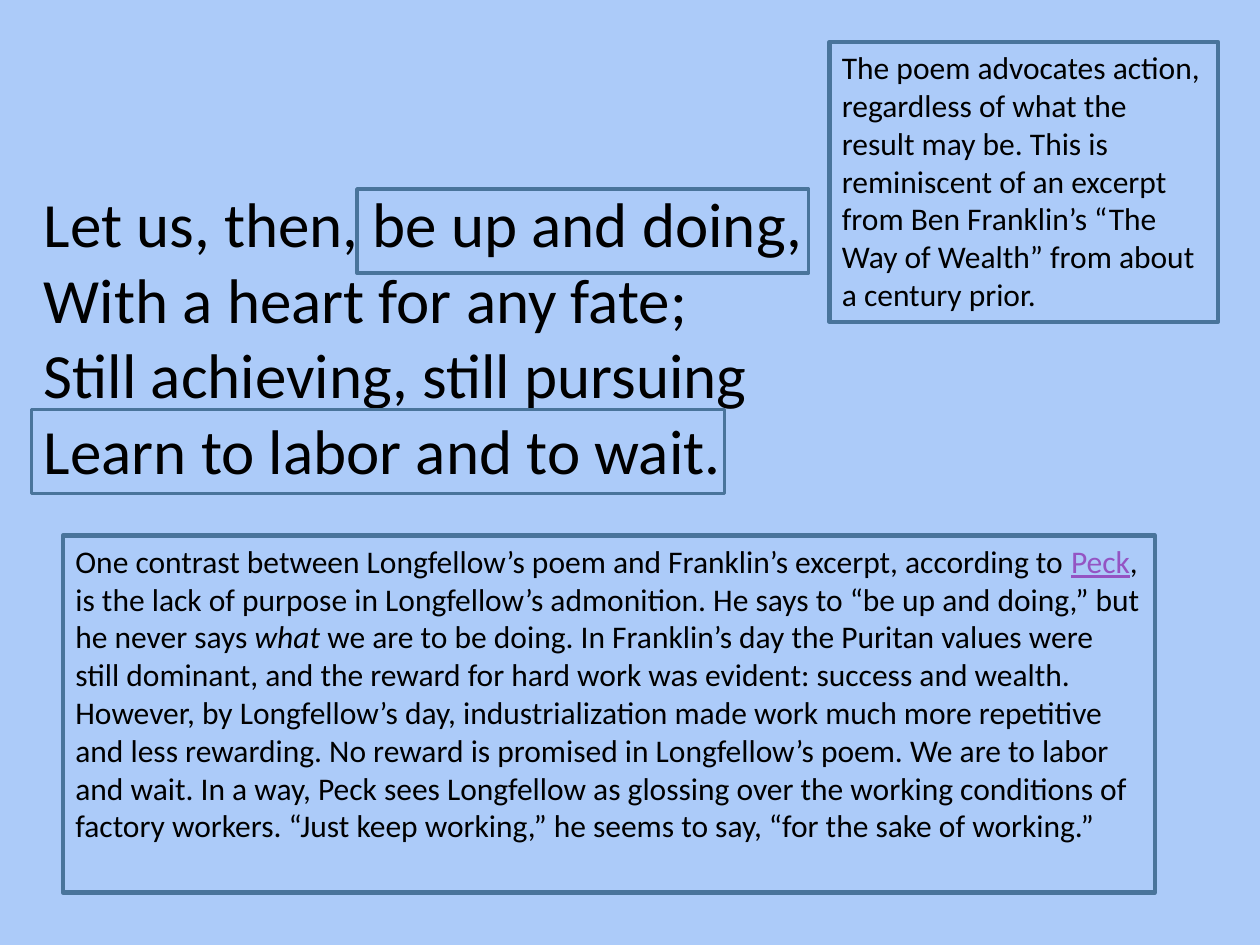
import dataclasses

import pptx
import pptx.dml.color
import pptx.enum.shapes
import pptx.enum.text
import pptx.util

Pt = pptx.util.Pt


@dataclasses.dataclass(frozen=True)
class Theme:
    back: str = "ACCBF9"
    edge: str = "49749B"
    ink: str = "000000"
    link: str = "9454C3"
    font: str = "Calibri"
    verse: int = 36
    note: int = 18
    thin: float = 2
    thick: float = 2.5


THEME = Theme()

POEM = [
    "Let us, then, be up and doing,",
    "With a heart for any fate;",
    "Still achieving, still pursuing",
    "Learn to labor and to wait.",
]

ACTION = (
    "The poem advocates action, regardless of what the result may be. "
    "This is reminiscent of an excerpt from Ben Franklin’s “The Way of "
    "Wealth” from about a century prior."
)

BEFORE = (
    "One contrast between Longfellow’s poem and Franklin’s excerpt, "
    "according to "
)
MIDDLE = (
    ", is the lack of purpose in Longfellow’s admonition. He says to "
    "“be up and doing,” but he never says "
)
AFTER = (
    " we are to be doing. In Franklin’s day the Puritan values were still "
    "dominant, and the reward for hard work was evident: success and wealth. "
    "However, by Longfellow’s day, industrialization made work much more "
    "repetitive and less rewarding. No reward is promised in Longfellow’s "
    "poem. We are to labor and wait. In a way, Peck sees Longfellow as "
    "glossing over the working conditions of factory workers. “Just keep "
    "working,” he seems to say, “for the sake of working.”"
)


def color(code):
    return pptx.dml.color.RGBColor.from_string(code)


def write(para, text, size=THEME.note, ink=THEME.ink, italic=False, under=False):
    para.alignment = pptx.enum.text.PP_ALIGN.LEFT
    run = para.add_run()
    run.text = text
    font = run.font
    font.name = THEME.font
    font.size = Pt(size)
    font.color.rgb = color(ink)
    font.italic = italic
    font.underline = under


def frame(shapes, left, top, width, height, line=THEME.thin):
    """Add an unfilled outlined box and return its text frame."""
    box = shapes.add_shape(
        pptx.enum.shapes.MSO_SHAPE.RECTANGLE,
        Pt(left), Pt(top), Pt(width), Pt(height),
    )
    box.shadow.inherit = False
    box.fill.background()
    box.line.color.rgb = color(THEME.edge)
    box.line.width = Pt(line)
    body = box.text_frame
    body.word_wrap = True
    body.vertical_anchor = pptx.enum.text.MSO_ANCHOR.TOP
    return body


def verse(shapes, lines, left, top, width, height):
    box = shapes.add_textbox(Pt(left), Pt(top), Pt(width), Pt(height))
    body = box.text_frame
    body.word_wrap = True
    for i, line in enumerate(lines):
        para = body.add_paragraph() if i else body.paragraphs[0]
        write(para, line, size=THEME.verse)


def main():
    deck = pptx.Presentation()
    deck.slide_width, deck.slide_height = Pt(720), Pt(540)
    blank = deck.slide_layouts.get_by_name("Blank")
    slide = deck.slides.add_slide(blank)
    slide.background.fill.solid()
    slide.background.fill.fore_color.rgb = color(THEME.back)
    shapes = slide.shapes

    verse(shapes, POEM, 18, 102, 642, 181.5)

    # The first note belongs with the phrase it explains.
    group = shapes.add_group_shape().shapes
    note = frame(group, 474, 24, 222, 160, line=THEME.thick)
    write(note.paragraphs[0], ACTION)
    frame(group, 204, 108, 258, 48)

    frame(shapes, 18, 234, 396, 48)
    note = frame(shapes, 36, 306, 624, 204, line=THEME.thick)
    para = note.paragraphs[0]
    write(para, BEFORE)
    write(para, "Peck", ink=THEME.link, under=True)
    write(para, MIDDLE)
    write(para, "what", italic=True)
    write(para, AFTER)

    deck.save("out.pptx")


if __name__ == "__main__":
    main()
